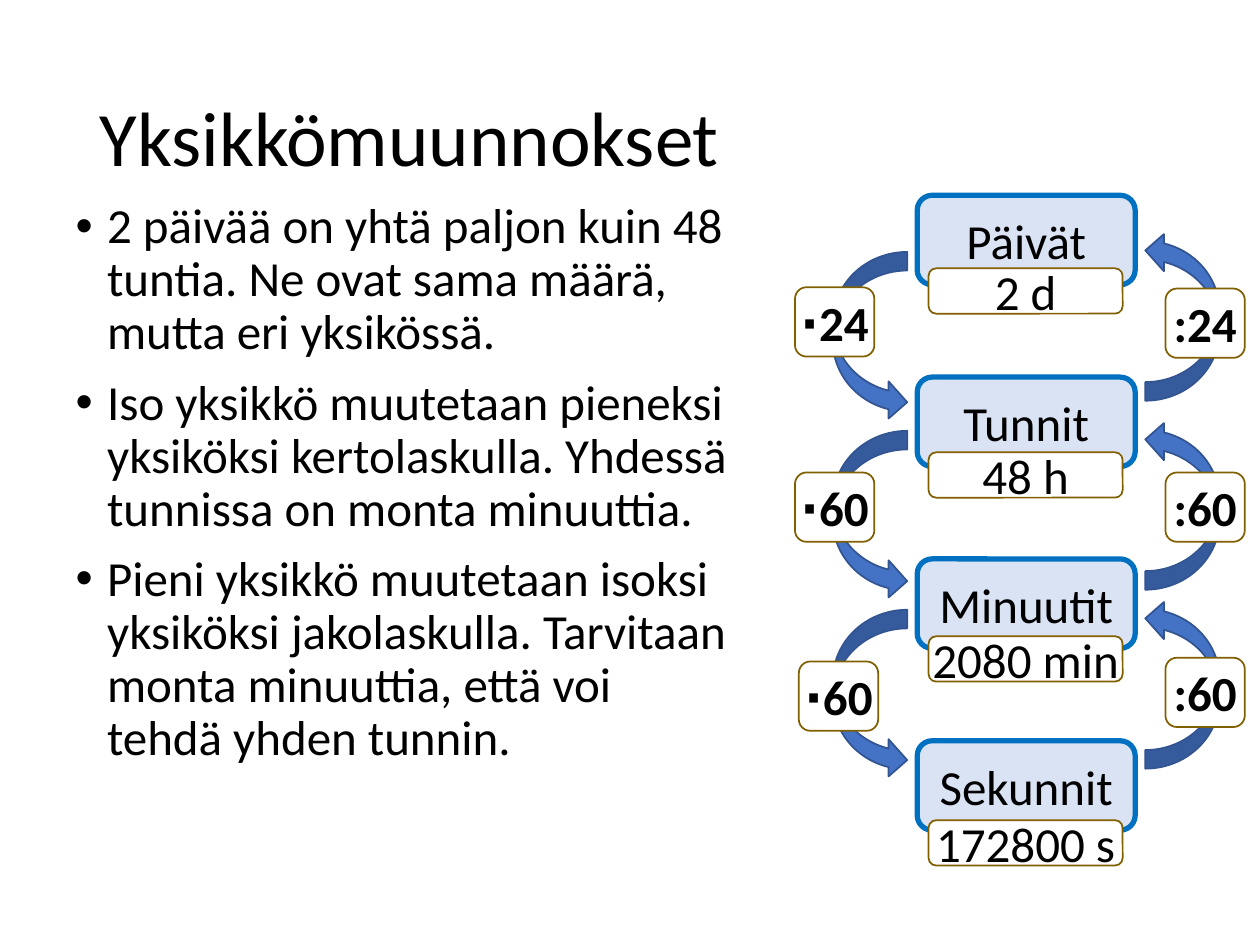
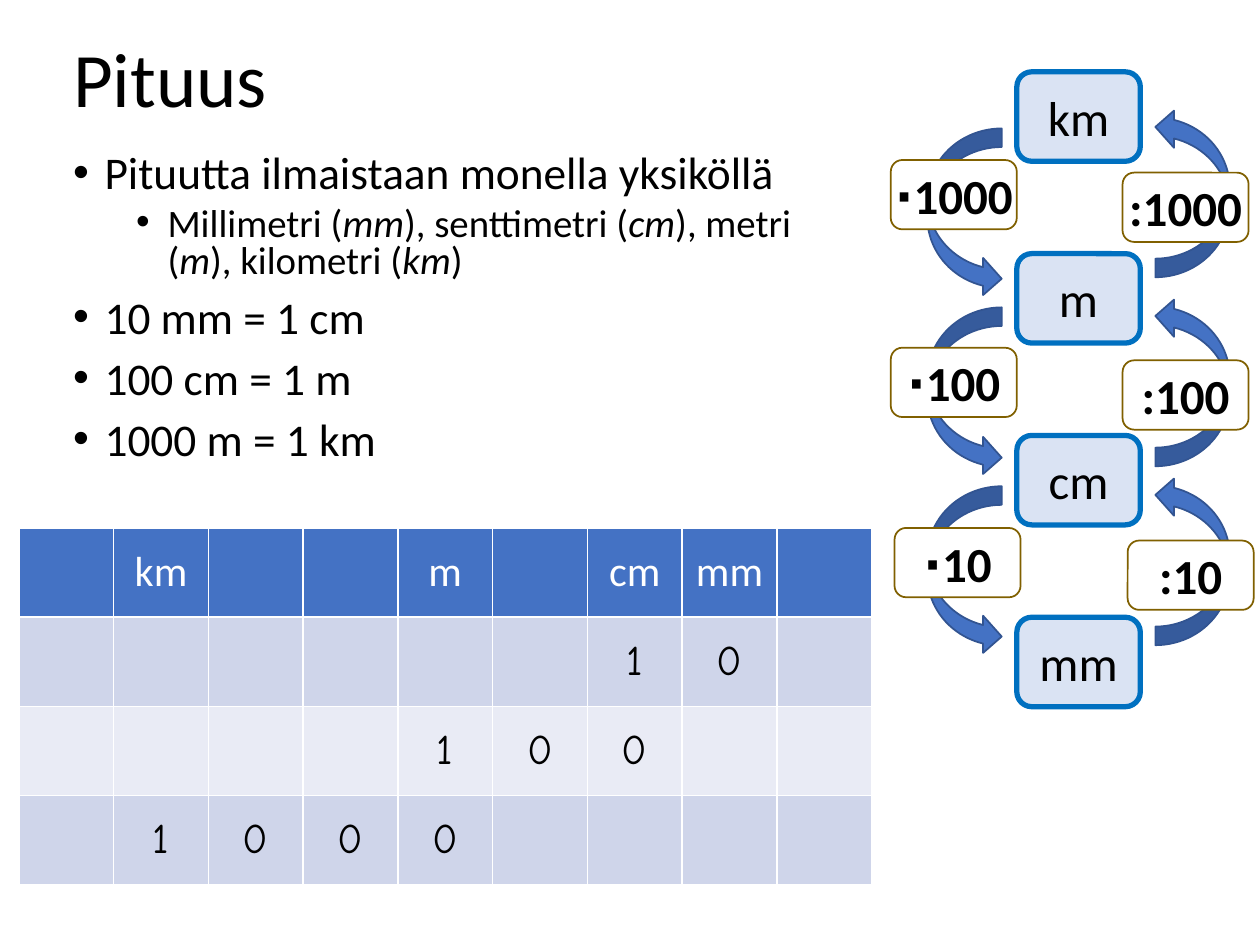
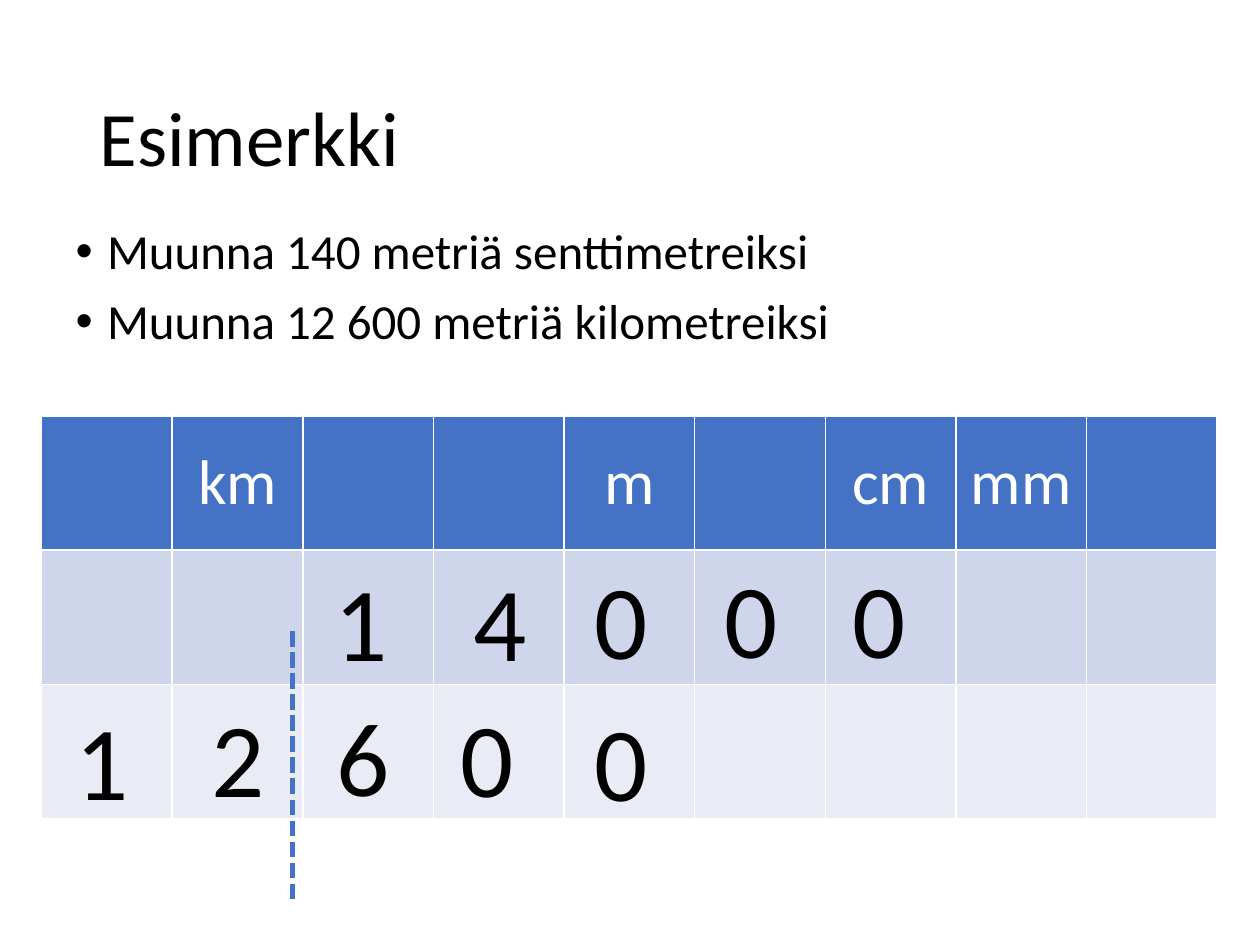
from lxml.etree import SubElement
from pptx import Presentation
from pptx.dml.color import RGBColor
from pptx.enum.dml import MSO_LINE
from pptx.enum.shapes import MSO_CONNECTOR, MSO_SHAPE
from pptx.enum.text import MSO_ANCHOR, MSO_AUTO_SIZE, PP_ALIGN
from pptx.oxml.ns import qn
from pptx.util import Inches, Pt

# Slide grid: 10 columns by 7.5 rows of square cells
WIDTH, HEIGHT = Inches(10), Inches(7.5)
CELL = WIDTH / 10

BLACK = RGBColor(0x00, 0x00, 0x00)
WHITE = RGBColor(0xFF, 0xFF, 0xFF)
BLUE = RGBColor(0x44, 0x72, 0xC4)
NAVY = RGBColor(0x32, 0x54, 0x91)
AZURE = RGBColor(0x00, 0x70, 0xC0)
PALE = RGBColor(0xDA, 0xE3, 0xF3)
BROWN = RGBColor(0x80, 0x60, 0x00)
BANDS = RGBColor(0xCF, 0xD5, 0xEA), RGBColor(0xE9, 0xEB, 0xF5)

SANS, HAND = "Calibri", "Comic Neue"
UNITS = {1: "km", 4: "m", 6: "cm", 7: "mm"}
COLS = 9


def grid(*cells):
    """Turn grid cells into slide lengths."""
    return [round(n * CELL) for n in cells]


def write(frame, text, size=28, color=BLACK, face=SANS, bold=False,
          align=PP_ALIGN.LEFT, level=0, lines=None, gap=0, bullet=False,
          more=False):
    """Write one paragraph; parts between asterisks are italic."""
    para = frame.add_paragraph() if more else frame.paragraphs[0]
    para.alignment, para.level = align, level
    para.space_before = Pt(gap)
    if lines:
        para.line_spacing = lines
    if bullet:
        props = para._p.get_or_add_pPr()
        props.set("marL", str(Inches(0.25 + 0.5 * level)))
        props.set("indent", str(-Inches(0.25)))
        SubElement(props, qn("a:buFont"), typeface="Arial")
        SubElement(props, qn("a:buChar"), char="•")
    for i, part in enumerate(text.split("*")):
        run = para.add_run()
        run.text = part
        font = run.font
        font.size, font.name, font.bold = Pt(size), face, bold
        font.italic = i % 2 == 1
        font.color.rgb = color


def place(holder, area, anchor):
    holder.left, holder.top, holder.width, holder.height = grid(*area)
    frame = holder.text_frame
    frame.word_wrap, frame.auto_size = True, MSO_AUTO_SIZE.NONE
    frame.vertical_anchor = anchor
    return frame


def start(deck, title, items, body, head=(0.69, 0.4, 8.62, 1.45),
          sizes=(28, 24), lines=0.9):
    """Add a slide with a title and a list of (level, text) items."""
    slide = deck.slides.add_slide(deck.slide_layouts[1])
    frame = place(slide.shapes.title, head, MSO_ANCHOR.MIDDLE)
    write(frame, title, size=44, lines=0.9)
    frame = place(slide.placeholders[1], body, MSO_ANCHOR.TOP)
    for i, (level, text) in enumerate(items):
        gap = (10, 5)[level] if i else 0
        write(frame, text, size=sizes[level], level=level, lines=lines,
              gap=gap, bullet=True, more=i > 0)
    return slide


def shape(slide, kind, area, fill, line, weight=1):
    item = slide.shapes.add_shape(kind, *grid(*area))
    item.shadow.inherit = False
    item.fill.solid()
    item.fill.fore_color.rgb = fill
    item.line.color.rgb, item.line.width = line, Pt(weight)
    return item


def box(slide, text, area, fill=WHITE, line=BROWN, weight=1, bold=False):
    item = shape(slide, MSO_SHAPE.ROUNDED_RECTANGLE, area, fill, line, weight)
    frame = item.text_frame
    frame.word_wrap, frame.vertical_anchor = True, MSO_ANCHOR.MIDDLE
    frame.margin_left = frame.margin_right = 0
    frame.margin_top = frame.margin_bottom = 0
    write(frame, text, bold=bold, align=PP_ALIGN.CENTER)


def ladder(slide, units, left, top, wide, sides, tags, span):
    """Stack the units, join them by arrows and tag the arrows."""
    for i, unit in enumerate(units):
        box(slide, unit, (left, top + 1.443 * i, wide, 0.71), PALE, AZURE, 3)
    downs, ups = (0.45, 1.87, 3.29), (0.29, 1.79, 3.21)
    for x, steps, turn in zip(sides, (downs, ups), (0, 180)):
        for step in steps:
            arrow = shape(slide, MSO_SHAPE.CURVED_RIGHT_ARROW,
                          (x, top + step, 0.59, 1.34), BLUE, NAVY)
            arrow.rotation = turn
    for text, x, y in tags:
        box(slide, text, (x, y, span, 0.55), bold=True)


def table(slide, area, rows, size):
    """Draw the unit table; each row maps a column to its text."""
    grid_table = slide.shapes.add_table(len(rows), COLS, *grid(*area)).table
    for r, row in enumerate(rows):
        for c in range(COLS):
            cell = grid_table.cell(r, c)
            cell.fill.solid()
            cell.fill.fore_color.rgb = BANDS[(r - 1) % 2] if r else BLUE
            cell.vertical_anchor = MSO_ANCHOR.MIDDLE
            if c in row:
                write(cell.text_frame, row[c], size=size,
                      color=BLACK if r else WHITE, face=HAND if r else SANS,
                      align=PP_ALIGN.CENTER)


def digit(slide, text, x, y):
    frame = slide.shapes.add_textbox(*grid(x, y, 0.63, 1.11)).text_frame
    frame.word_wrap = False
    write(frame, text, size=60)


def dashed(slide, x, top, end):
    line = slide.shapes.add_connector(MSO_CONNECTOR.STRAIGHT,
                                      *grid(x, top, x, end))
    line.line.color.rgb, line.line.width = BLUE, Pt(3)
    line.line.dash_style = MSO_LINE.SQUARE_DOT
    SubElement(line._element.spPr, qn("a:effectLst"))


def times(deck):
    items = [
        (0, "2 päivää on yhtä paljon kuin 48 tuntia. Ne ovat sama määrä, "
            "mutta eri yksikössä."),
        (0, "Iso yksikkö muutetaan pieneksi yksiköksi kertolaskulla. "
            "Yhdessä tunnissa on monta minuuttia."),
        (0, "Pieni yksikkö muutetaan isoksi yksiköksi jakolaskulla. "
            "Tarvitaan monta minuuttia, että voi tehdä yhden tunnin."),
    ]
    slide = start(deck, "Yksikkömuunnokset", items, (0.5, 1.55, 5.43, 5.51))
    tags = [(":24", 9.25, 2.29), (":60", 9.25, 3.75), (":60", 9.25, 5.22),
            ("∙24", 6.31, 2.28), ("∙60", 6.31, 3.75), ("∙60", 6.34, 5.25)]
    ladder(slide, ["Päivät", "Tunnit", "Minuutit", "Sekunnit"],
           7.28, 1.55, 1.73, (6.61, 9.09), tags, 0.63)
    # Amounts under the units
    for i, text in enumerate(["2 d", "48 h", "2080 min", "172800 s"]):
        box(slide, text, (7.37, 2.13 + 1.46 * i, 1.54, 0.36))


def lengths(deck):
    items = [
        (0, "Pituutta ilmaistaan monella yksiköllä"),
        (1, "Millimetri (*mm*), senttimetri (*cm*), metri (*m*), "
            "kilometri (*km*)"),
        (0, "10 mm = 1 cm"),
        (0, "100 cm = 1 m"),
        (0, "1000 m = 1 km"),
    ]
    slide = start(deck, "Pituus", items, (0.48, 1.18, 6.33, 2.76),
                  head=(0.48, 0.03, 9, 1.25), sizes=(25.9, 22.2), lines=0.8)
    rows = [UNITS, {6: "1", 7: "0"}, {4: "1", 5: "0", 6: "0"},
            {1: "1", 2: "0", 3: "0", 4: "0"}]
    table(slide, (0.15, 4.19, 6.77, 2.83), rows, 24)
    tags = [("∙1000", 7.07, 1.27), ("∙100", 7.07, 2.76), ("∙10", 7.1, 4.19),
            (":1000", 8.91, 1.37), (":100", 8.91, 2.86), (":10", 8.95, 4.29)]
    ladder(slide, ["km", "m", "cm", "mm"], 8.07, 0.57, 0.98,
           (7.36, 9.17), tags, 1)


def sample(deck):
    items = [(0, "Muunna 140 metriä senttimetreiksi"),
             (0, "Muunna 12 600 metriä kilometreiksi")]
    slide = start(deck, "Esimerkki", items, (0.5, 1.75, 9, 3.1))
    table(slide, (0.33, 3.3, 9.33, 3.2), [UNITS, {}, {}], 36)
    # Digits over the table cells
    digits = [("1", 2.56, 4.37), ("4", 3.66, 4.37), ("0", 4.62, 4.35),
              ("0", 5.65, 4.34), ("0", 6.67, 4.34),
              ("1", 0.5, 5.47), ("2", 1.58, 5.45), ("6", 2.57, 5.44),
              ("0", 3.56, 5.45), ("0", 4.62, 5.48)]
    for text, x, y in digits:
        digit(slide, text, x, y)
    dashed(slide, 2.32, 5.01, 7.14)


def main():
    deck = Presentation()
    deck.slide_width, deck.slide_height = WIDTH, HEIGHT
    times(deck)
    lengths(deck)
    sample(deck)
    deck.save("out.pptx")


if __name__ == "__main__":
    main()
